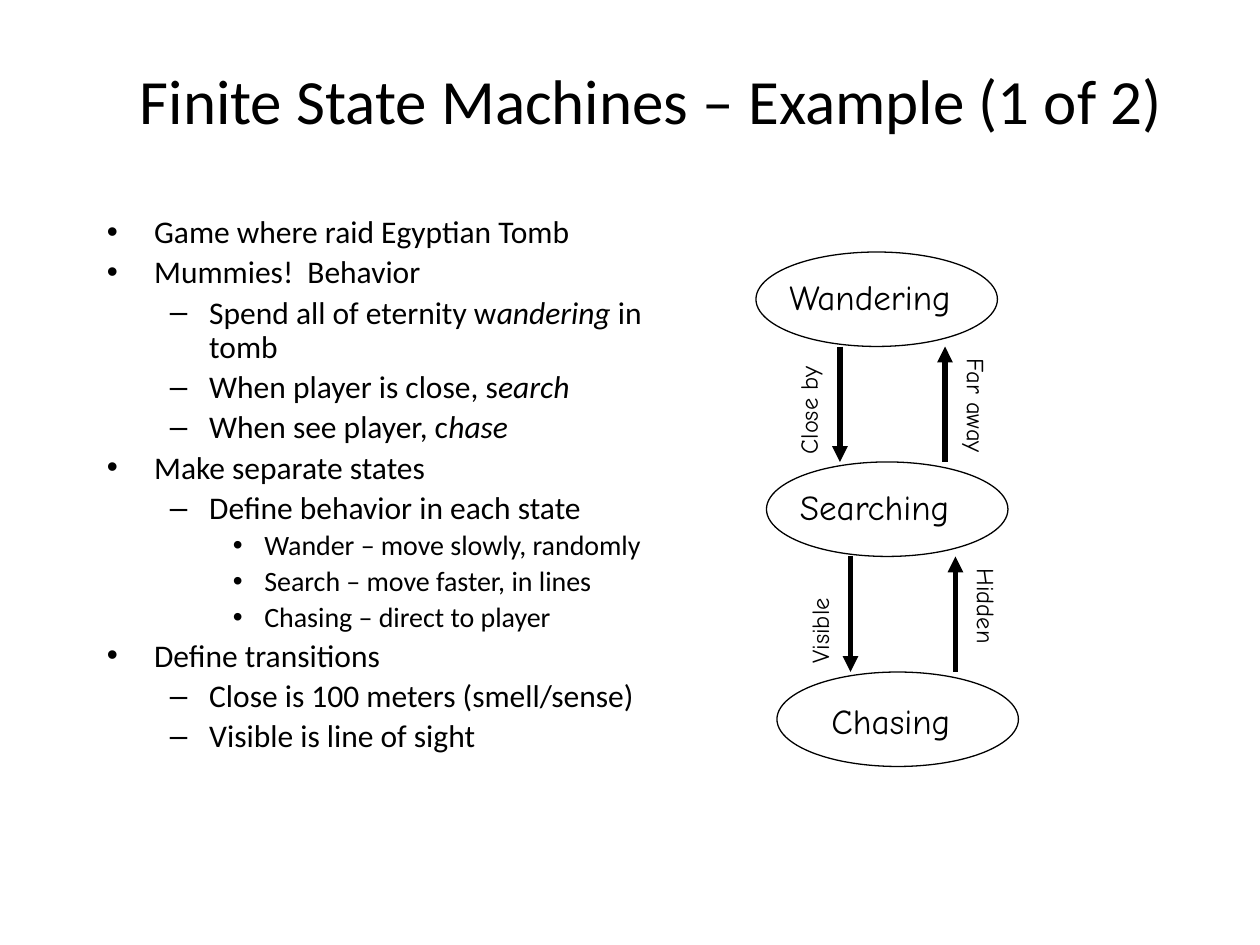
from typing import NamedTuple

from lxml.etree import SubElement
from pptx import Presentation
from pptx.dml.color import RGBColor
from pptx.enum.shapes import MSO_CONNECTOR as CONN, MSO_SHAPE as SHAPE
from pptx.enum.text import MSO_ANCHOR as ANCHOR, MSO_AUTO_SIZE as AUTO, PP_ALIGN as ALIGN
from pptx.oxml.ns import qn
from pptx.util import Pt

BLACK = "000000"
BODY_FONT, DIAGRAM_FONT = "Calibri", "Comic Neue"
STATE_W, STATE_H = 138, 54
STATE_LEFT, STATE_TOP = 432, 144
STEP_X, STEP_Y = 6, 120
DOWN_DX, UP_DX = 48, 108


class Level(NamedTuple):
    margin: float
    indent: float
    bullet: str
    size: float


class Item(NamedTuple):
    level: int
    text: str


class Label(NamedTuple):
    text: str
    left: float
    top: float
    width: float
    height: float
    size: float
    rotation: float = 0


class Transition(NamedTuple):
    source: int
    target: int
    label: Label


LEVELS = [
    Level(27, -27, "•", 18),
    Level(58.5, -22.5, "–", 18),
    Level(90, -18, "•", 16),
]

ITEMS = [
    Item(0, "Game where raid Egyptian Tomb"),
    Item(0, "Mummies!  Behavior"),
    Item(1, "Spend all of eternity w*andering *in tomb"),
    Item(1, "When player is close, s*earch"),
    Item(1, "When see player, c*hase"),
    Item(0, "Make separate states"),
    Item(1, "Define behavior in each state"),
    Item(2, "Wander – move slowly, randomly"),
    Item(2, "Search – move faster, in lines"),
    Item(2, "Chasing – direct to player"),
    Item(0, "Define transitions"),
    Item(1, "Close is 100 meters (smell/sense)"),
    Item(1, "Visible is line of sight"),
]

STATES = [
    Label("Wandering", 444, 154, 115, 31, 20),
    Label("Searching", 450, 274, 108, 31, 20),
    Label("Chasing", 468, 396, 85, 31, 20),
]

TRANSITIONS = [
    Transition(0, 1, Label("Close by", 427.5, 220.5, 68.5, 24, 14, 270)),
    Transition(1, 2, Label("Visible", 439, 345, 58.5, 24, 14, 270)),
    Transition(1, 0, Label("Far away", 522, 222, 72, 24, 14, 90)),
    Transition(2, 1, Label("Hidden", 533.5, 336, 60.5, 24, 14, 90)),
]


def rgb(color: str) -> RGBColor:
    return RGBColor.from_string(color)


def style(r, font: str, size: float, italic: bool = False) -> None:
    r.font.name = font
    r.font.size = Pt(size)
    r.font.italic = italic
    r.font.color.rgb = rgb(BLACK)


def add_title(s, text: str) -> None:
    tf = s.shapes.add_textbox(Pt(54), Pt(12), Pt(636), Pt(90)).text_frame
    tf.word_wrap = True
    tf.vertical_anchor = ANCHOR.MIDDLE
    tf.text = text
    p = tf.paragraphs[0]
    p.alignment = ALIGN.CENTER
    style(p.runs[0], BODY_FONT, 36)


def add_item(p, item: Item) -> None:
    level = LEVELS[item.level]
    p.level = item.level
    p.line_spacing = 0.9
    p.space_before = Pt(level.size * 0.2)
    pPr = p._p.get_or_add_pPr()
    pPr.set("marL", str(Pt(level.margin)))
    pPr.set("indent", str(Pt(level.indent)))
    SubElement(pPr, qn("a:buFont")).set("typeface", "Arial")
    SubElement(pPr, qn("a:buChar")).set("char", level.bullet)
    for i, part in enumerate(item.text.split("*")):
        r = p.add_run()
        r.text = part
        style(r, BODY_FONT, level.size, italic=i % 2 == 1)


def add_body(s, items: list[Item]) -> None:
    tf = s.shapes.add_textbox(Pt(54), Pt(120), Pt(324), Pt(390)).text_frame
    tf.word_wrap = True
    for i, item in enumerate(items):
        add_item(tf.add_paragraph() if i else tf.paragraphs[0], item)


def add_label(shapes, label: Label) -> None:
    sp = shapes.add_textbox(Pt(label.left), Pt(label.top), Pt(label.width), Pt(label.height))
    sp.rotation = label.rotation
    tf = sp.text_frame
    tf.word_wrap = False
    tf.auto_size = AUTO.SHAPE_TO_FIT_TEXT
    tf.text = label.text
    style(tf.paragraphs[0].runs[0], DIAGRAM_FONT, label.size)


def add_state(s, index: int, label: Label) -> None:
    group = s.shapes.add_group_shape()
    sp = group.shapes.add_shape(
        SHAPE.OVAL,
        Pt(STATE_LEFT + index * STEP_X),
        Pt(STATE_TOP + index * STEP_Y),
        Pt(STATE_W),
        Pt(STATE_H),
    )
    sp.shadow.inherit = False
    sp.fill.background()
    sp.line.color.rgb = rgb(BLACK)
    sp.line.width = Pt(0.75)
    add_label(group.shapes, label)


def add_transition(s, transition: Transition) -> None:
    upper = min(transition.source, transition.target)
    going_down = transition.source == upper
    x = STATE_LEFT + upper * STEP_X + (DOWN_DX if going_down else UP_DX)
    start = STATE_TOP + upper * STEP_Y + STATE_H
    end = STATE_TOP + (upper + 1) * STEP_Y
    if not going_down:
        start, end = end, start
    line = s.shapes.add_connector(CONN.STRAIGHT, Pt(x), Pt(start), Pt(x), Pt(end))
    line.line.color.rgb = rgb(BLACK)
    line.line.width = Pt(3)
    SubElement(line.line._get_or_add_ln(), qn("a:tailEnd")).set("type", "triangle")
    SubElement(line._element.spPr, qn("a:effectLst"))
    add_label(s.shapes, transition.label)


def main() -> None:
    prs = Presentation()
    prs.slide_width, prs.slide_height = Pt(720), Pt(540)
    s = prs.slides.add_slide(prs.slide_layouts[6])
    add_title(s, "Finite State Machines – Example (1 of 2)")
    add_body(s, ITEMS)
    for index, label in enumerate(STATES):
        add_state(s, index, label)
    for transition in TRANSITIONS:
        add_transition(s, transition)
    prs.save("out.pptx")


if __name__ == "__main__":
    main()
